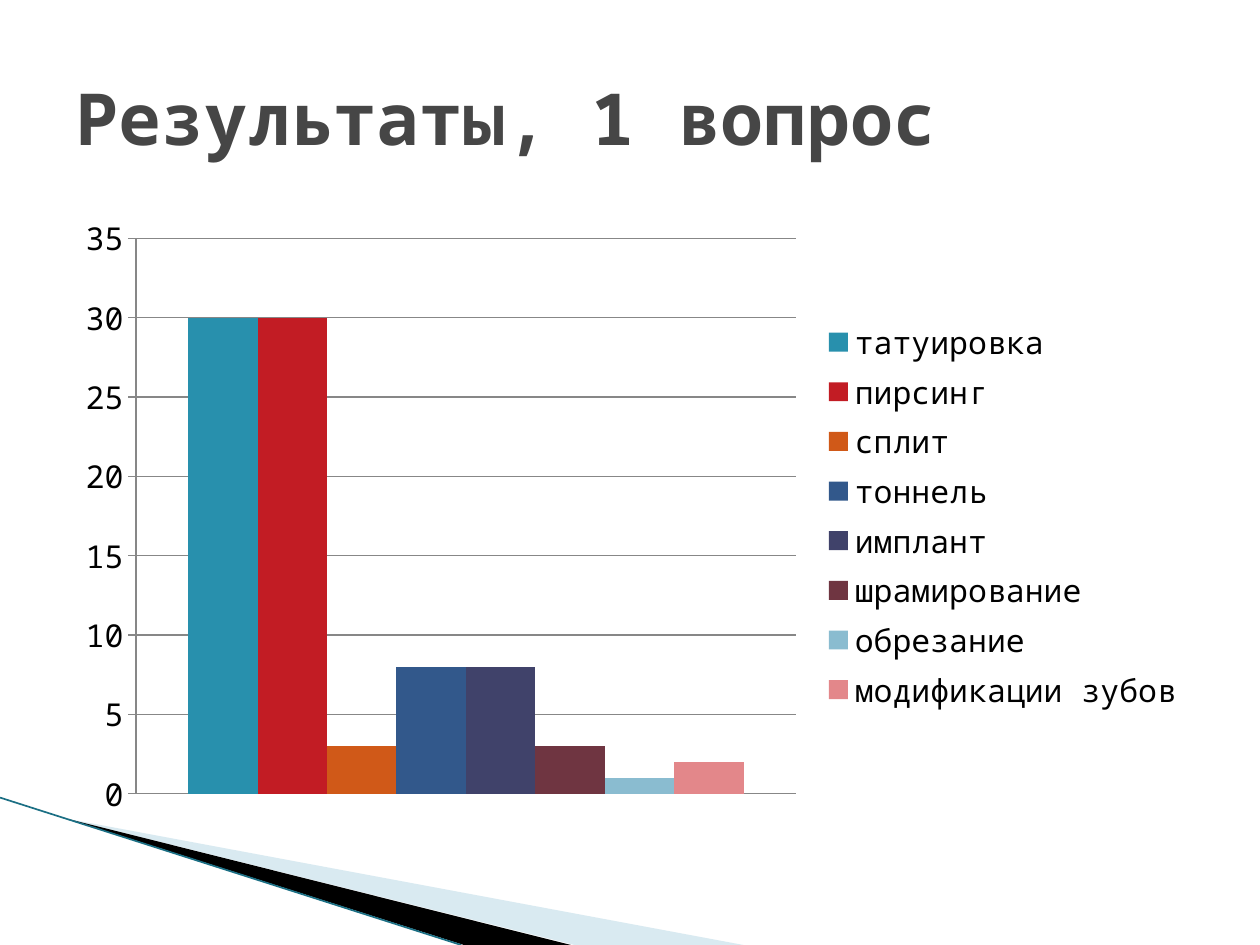
from lxml.etree import SubElement
from pptx import Presentation
from pptx.chart.data import CategoryChartData
from pptx.dml.color import RGBColor
from pptx.enum.chart import XL_CHART_TYPE, XL_LEGEND_POSITION, XL_TICK_MARK
from pptx.enum.shapes import MSO_CONNECTOR
from pptx.enum.text import MSO_ANCHOR
from pptx.oxml.ns import qn
from pptx.util import Inches, Pt

FONT = "Noto Sans Mono"
BLACK = RGBColor(0x00, 0x00, 0x00)
TITLE_GRAY = RGBColor(0x46, 0x46, 0x46)
AXIS_GRAY = RGBColor(0x87, 0x87, 0x87)
PALE_BLUE = RGBColor(0xA0, 0xCB, 0xDC)
EDGE_TEAL = RGBColor(0x1B, 0x6F, 0x84)

# Answer, number of votes, bar colour
ANSWERS = [
    ("татуировка", 30, RGBColor(0x28, 0x90, 0xAD)),
    ("пирсинг", 30, RGBColor(0xC2, 0x1C, 0x24)),
    ("сплит", 3, RGBColor(0xD0, 0x59, 0x18)),
    ("тоннель", 8, RGBColor(0x32, 0x58, 0x8B)),
    ("имплант", 8, RGBColor(0x40, 0x42, 0x6A)),
    ("шрамирование", 3, RGBColor(0x6F, 0x35, 0x41)),
    ("обрезание", 1, RGBColor(0x8A, 0xBC, 0xD0)),
    ("модификации зубов", 2, RGBColor(0xE3, 0x87, 0x8A)),
]


def add_text(slide, text, box, size, color, bold=False, anchor=MSO_ANCHOR.MIDDLE):
    frame = slide.shapes.add_textbox(*map(Inches, box)).text_frame
    frame.word_wrap = True
    frame.vertical_anchor = anchor
    paragraph = frame.paragraphs[0]
    paragraph.text = text
    font = paragraph.font
    font.name, font.size, font.bold = FONT, Pt(size), bold
    font.color.rgb = color


def add_wedge(slide, points, color, alpha=100):
    corners = [(Inches(x), Inches(y)) for x, y in points]
    builder = slide.shapes.build_freeform(*corners[0])
    builder.add_line_segments(corners[1:], close=True)
    shape = builder.convert_to_shape()
    shape.shadow.inherit = False
    shape.line.fill.background()
    shape.fill.solid()
    shape.fill.fore_color.rgb = color
    if alpha < 100:
        color_element = shape.fill._xPr.find(qn("a:solidFill"))[0]
        SubElement(color_element, qn("a:alpha"), val=str(alpha * 1000))


def add_corner_decoration(slide, box):
    left, top, width, height = box
    bottom = top + height
    tip_x, tip_y = left + 0.54, top + 0.17

    # Pale and black wedges fanning out from one tip
    add_wedge(slide, [(tip_x, tip_y), (left + width, bottom), (left + 4.56, bottom)],
              PALE_BLUE, alpha=40)
    add_wedge(slide, [(tip_x, tip_y), (left + 4.53, bottom), (left + 3.68, bottom)], BLACK)

    # Thin edge along the lower side
    edge = slide.shapes.add_connector(
        MSO_CONNECTOR.STRAIGHT, Inches(left), Inches(top),
        Inches(left + 3.66), Inches(bottom))
    edge.line.color.rgb = EDGE_TEAL
    edge.line.width = Pt(0.95)
    SubElement(edge._element.spPr, qn("a:effectLst"))


def add_results_chart(slide, box):
    data = CategoryChartData()
    data.categories = ["1"]
    for name, votes, _ in ANSWERS:
        data.add_series(name, [votes])
    chart = slide.shapes.add_chart(
        XL_CHART_TYPE.COLUMN_CLUSTERED, *map(Inches, box), data).chart
    chart.has_title = False
    chart.font.name, chart.font.size = FONT, Pt(18)
    chart.font.color.rgb = BLACK

    # Bars
    plot = chart.plots[0]
    plot.vary_by_categories = False
    plot.gap_width, plot.overlap = 150, 0
    for series, (_, _, color) in zip(plot.series, ANSWERS):
        series.format.fill.solid()
        series.format.fill.fore_color.rgb = color

    # Axes
    chart.category_axis.visible = False
    axis = chart.value_axis
    axis.minimum_scale, axis.maximum_scale, axis.major_unit = 0, 35, 5
    axis.major_tick_mark = XL_TICK_MARK.OUTSIDE
    axis.has_major_gridlines = True
    for line in (axis.format.line, axis.major_gridlines.format.line):
        line.color.rgb = AXIS_GRAY
        line.width = Pt(0.75)

    # Legend
    chart.has_legend = True
    chart.legend.position = XL_LEGEND_POSITION.RIGHT
    chart.legend.include_in_layout = False


def main():
    presentation = Presentation()
    presentation.slide_width, presentation.slide_height = Inches(10), Inches(7.5)
    slide = presentation.slides.add_slide(presentation.slide_layouts[6])
    add_corner_decoration(slide, (0, 6.33, 5.9, 1.17))
    add_text(slide, "Результаты, 1 вопрос", (0.5, 0.3, 9, 1.25),
             size=41, color=TITLE_GRAY, bold=True)
    add_results_chart(slide, (0.5, 1.62, 9, 4.95))
    presentation.save("out.pptx")


if __name__ == "__main__":
    main()
